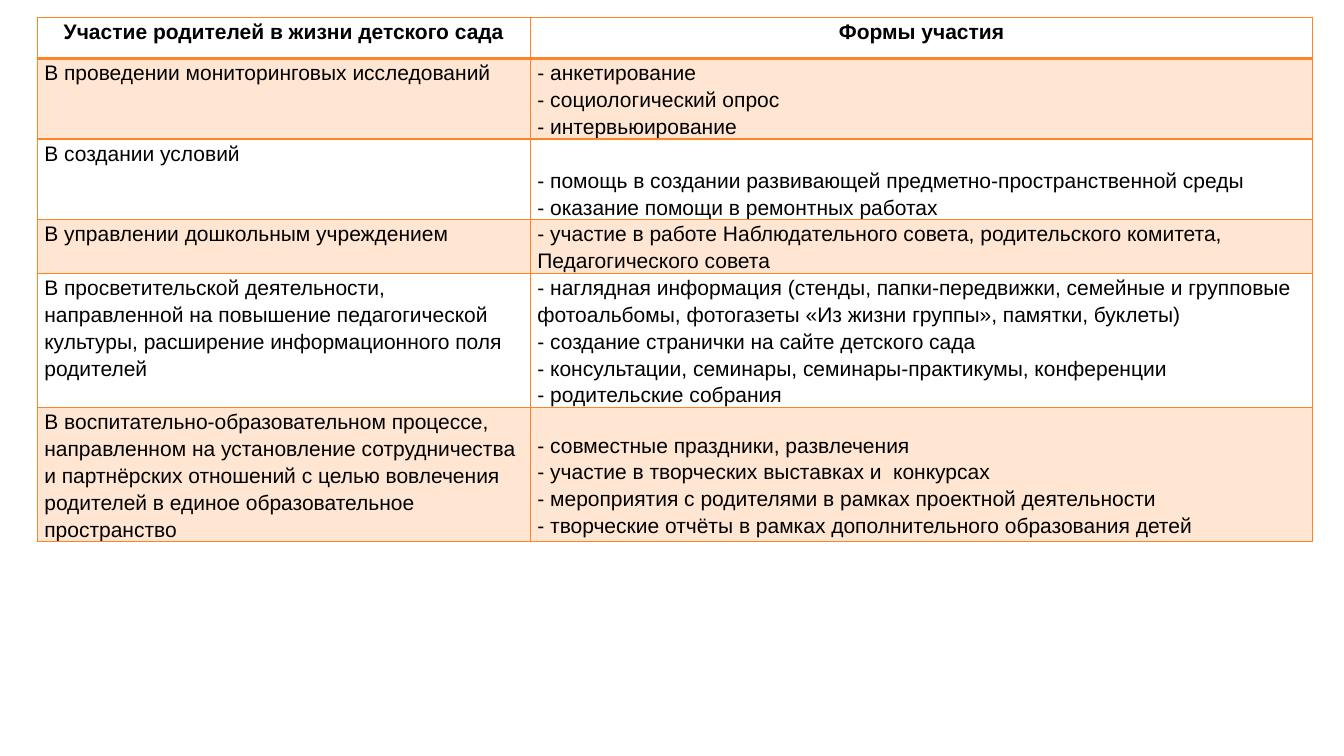
from dataclasses import dataclass

from lxml import etree
from pptx import Presentation, util as u
from pptx.dml.color import RGBColor
from pptx.enum import text
from pptx.oxml.ns import qn


@dataclass(frozen=True)
class Theme:
    """Colours, type and line sizes of the slide."""
    accent: str = "FF8427"
    ink: str = "000000"
    font: str = "Arial"
    size: float = 15
    spacing: float = 1.15
    band_alpha: int = 20
    line: float = 1
    header_line: float = 2


THEME = Theme()
TEXT_LINE = 0.266
HEADER_HEIGHT = 0.41
COLUMN_SHARES = (4.89 / 12.65, 7.76 / 12.65)
HEADINGS = ("Участие родителей в жизни детского сада", "Формы участия")
AREAS = [
    ("В проведении мониторинговых исследований",
     ["- анкетирование", "- социологический опрос", "- интервьюирование"], 3, 0),
    ("В создании условий",
     ["- помощь в создании развивающей предметно-пространственной среды",
      "- оказание помощи в ремонтных работах"], 3, 1),
    ("В управлении дошкольным учреждением",
     ["- участие в работе Наблюдательного совета, родительского комитета, "
      "Педагогического совета"], 2, 0),
    ("В просветительской деятельности, направленной на повышение педагогической "
     "культуры, расширение информационного поля родителей",
     ["- наглядная информация (стенды, папки-передвижки, семейные и групповые "
      "фотоальбомы, фотогазеты «Из жизни группы», памятки, буклеты)",
      "- создание странички на сайте детского сада",
      "- консультации, семинары, семинары-практикумы, конференции",
      "- родительские собрания"], 5, 0),
    ("В воспитательно-образовательном процессе, направленном на установление "
     "сотрудничества и партнёрских отношений с целью вовлечения родителей "
     "в единое образовательное пространство",
     ["- совместные праздники, развлечения",
      "- участие в творческих выставках и  конкурсах",
      "- мероприятия с родителями в рамках проектной деятельности",
      "- творческие отчёты в рамках дополнительного образования детей"], 5, 0.87),
]


def set_all(target, values):
    """Set every attribute of a dict on the target."""
    for name, value in values.items():
        setattr(target, name, value)


def draw_borders(cell, widths):
    """Outline a cell with a line width for each side."""
    for side in ("L", "R", "T", "B"):
        edge = etree.SubElement(cell._tc.get_or_add_tcPr(), qn(f"a:ln{side}"),
                                w=str(u.Pt(widths.get(side, THEME.line))))
        fill = etree.SubElement(edge, qn("a:solidFill"))
        etree.SubElement(fill, qn("a:srgbClr"), val=THEME.accent)


def fill_cell(cell, banded):
    """Tint a banded cell and clear any other."""
    if not banded:
        cell.fill.background()
        return
    cell.fill.solid()
    cell.fill.fore_color.rgb = RGBColor.from_string(THEME.accent)
    tint = cell._tc.tcPr.find(f"{qn('a:solidFill')}/{qn('a:srgbClr')}")
    etree.SubElement(tint, qn("a:alpha"), val=str(THEME.band_alpha * 1000))


def write_cell(cell, lines, header=False, skipped=0):
    """Write lines into a cell below a number of skipped lines."""
    set_all(cell, {"margin_left": u.Inches(0.07), "margin_right": u.Inches(0.07),
                   "margin_top": u.Inches(skipped * TEXT_LINE), "margin_bottom": 0})
    cell.text_frame.text = "\n".join(lines)
    align = text.PP_ALIGN.CENTER if header else text.PP_ALIGN.LEFT
    for paragraph in cell.text_frame.paragraphs:
        set_all(paragraph, {"alignment": align, "line_spacing": THEME.spacing})
        for run in paragraph.runs:
            set_all(run.font, {"name": THEME.font, "size": u.Pt(THEME.size), "bold": header})
            run.font.color.rgb = RGBColor.from_string(THEME.ink)


def participation_table(slide, left, top, width):
    """Place the table of participation areas and forms in its box."""
    heights = [HEADER_HEIGHT] + [count * TEXT_LINE for _, _, count, _ in AREAS]
    table = slide.shapes.add_table(len(heights), len(COLUMN_SHARES), left, top,
                                   width, u.Inches(sum(heights))).table
    set_all(table, {"first_row": False, "horz_banding": False})
    for column, share in zip(table.columns, COLUMN_SHARES):
        column.width = int(width * share)
    for row, height in zip(table.rows, heights):
        row.height = u.Inches(height)
    for index, row in enumerate(table.rows):
        widths = {0: {"B": THEME.header_line}, 1: {"T": THEME.header_line}}.get(index, {})
        for cell in row.cells:
            draw_borders(cell, widths)
            fill_cell(cell, index % 2 == 1)
    for column, heading in enumerate(HEADINGS):
        write_cell(table.cell(0, column), [heading], header=True)
    for index, (area, forms, _, skipped) in enumerate(AREAS, start=1):
        write_cell(table.cell(index, 0), [area])
        write_cell(table.cell(index, 1), forms, skipped=skipped)


def main():
    """Build and save the slide."""
    deck = Presentation()
    set_all(deck, {"slide_width": u.Inches(13.33), "slide_height": u.Inches(7.5)})
    slide = deck.slides.add_slide(deck.slide_layouts[6])
    participation_table(slide, u.Inches(0.37), u.Inches(0.17), u.Inches(12.65))
    deck.save("out.pptx")


if __name__ == "__main__":
    main()
